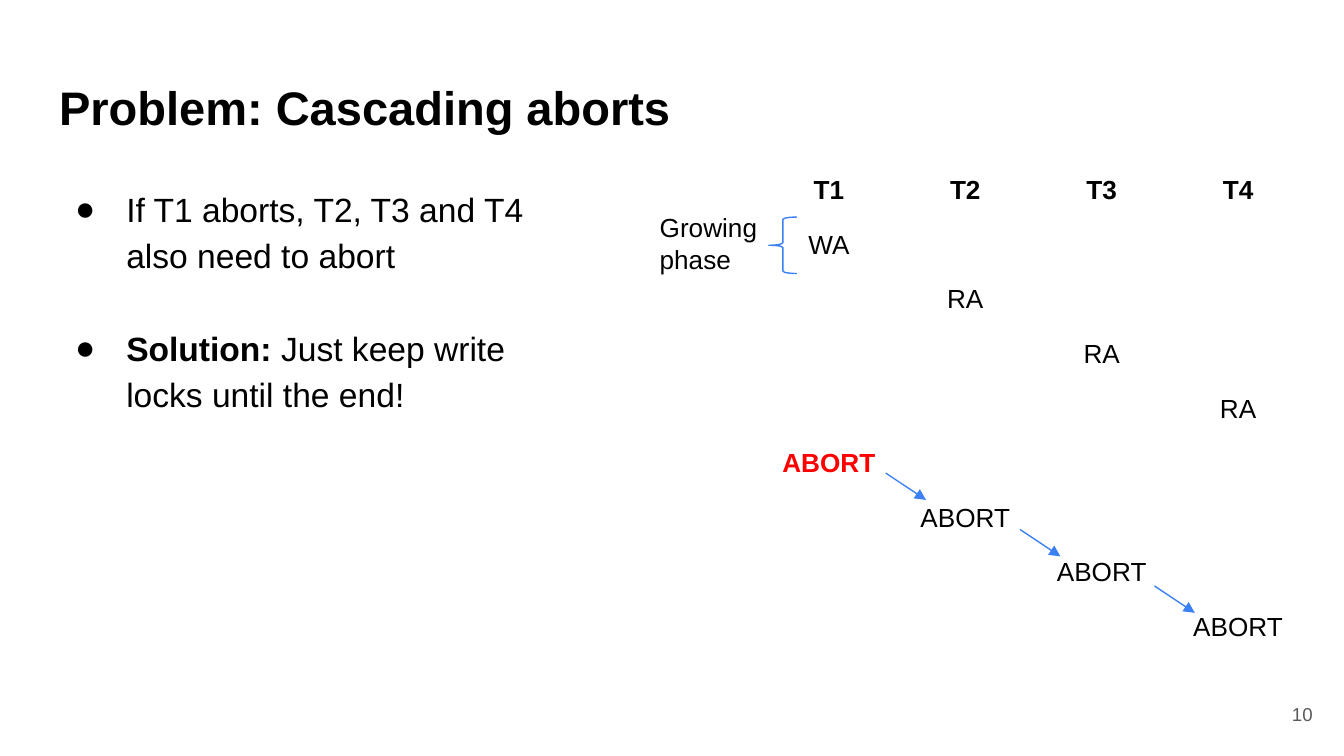
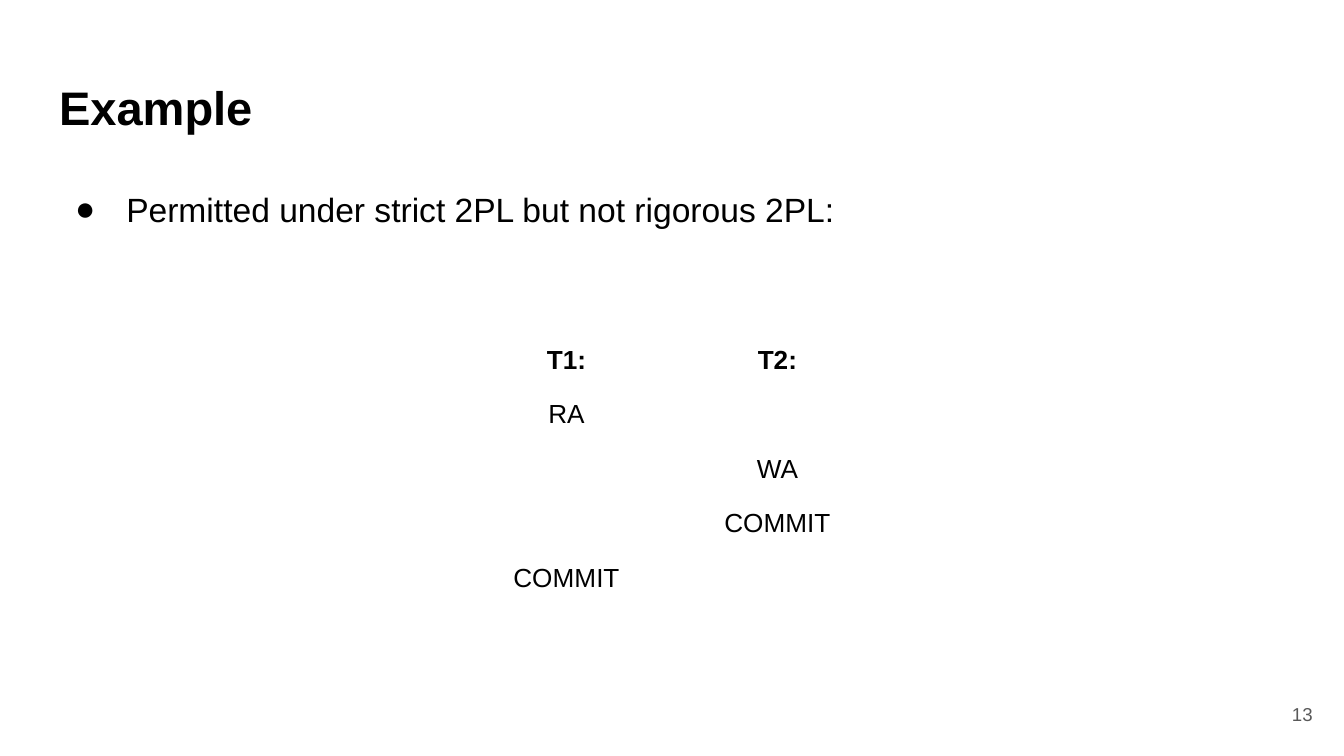
from dataclasses import dataclass

from pptx import Presentation
from pptx.dml.color import RGBColor
from pptx.enum.shapes import MSO_CONNECTOR, MSO_SHAPE
from pptx.enum.text import MSO_ANCHOR, PP_ALIGN
from pptx.oxml.ns import qn
from pptx.util import Inches, Pt
from lxml.etree import SubElement


@dataclass(frozen=True)
class Theme:
    font: str = "Arial"
    ink: str = "000000"
    muted: str = "595959"
    alert: str = "FF0000"
    accent: str = "3C81F3"
    paper: str = "FFFFFF"
    title_size: float = 25.2
    body_size: float = 18
    schedule_size: float = 14
    number_size: float = 10
    thin: float = 0.75
    rule: float = 1
    header_rule: float = 3


THEME = Theme()

# Grid: 100 columns across the slide, rows of the same length
COLUMNS = 100
LEFT = 3.41
FULL_WIDTH = 93.2
CONTENT_TOP = 12.6
CONTENT_HEIGHT = 37.4
SCHEDULE_ROW = 4.06


def write(paragraph, text, size=THEME.body_size, color=THEME.ink, bold=False, align=None):
    """Add one run of text to a paragraph."""
    run = paragraph.add_run()
    run.text = text
    run.font.name = THEME.font
    run.font.size = Pt(size)
    run.font.bold = bold
    run.font.color.rgb = RGBColor.from_string(color)
    if align is not None:
        paragraph.alignment = align


class Deck:
    def __init__(self, theme):
        self.theme = theme
        self.presentation = Presentation()
        # Widescreen, 16 to 9
        self.presentation.slide_width = Inches(10)
        self.presentation.slide_height = Inches(10 * 9 / 16)
        self.slide = None

    def grid(self, *lengths):
        unit = self.presentation.slide_width / COLUMNS
        return [round(length * unit) for length in lengths]

    def start_slide(self, title, number):
        """Begin a slide with the shared title and page number."""
        self.slide = self.presentation.slides.add_slide(self.presentation.slide_layouts[6])
        background = self.slide.background.fill
        background.solid()
        background.fore_color.rgb = RGBColor.from_string(self.theme.paper)
        heading = self.text_frame(LEFT, 4.87, FULL_WIDTH, 6.3)
        write(heading.paragraphs[0], title, size=self.theme.title_size, bold=True)
        footer = self.text_frame(92.65, 51, 6, 4.3)
        footer.vertical_anchor = MSO_ANCHOR.MIDDLE
        write(footer.paragraphs[0], str(number), size=self.theme.number_size,
              color=self.theme.muted, align=PP_ALIGN.RIGHT)

    def text_frame(self, left, top, width, height):
        frame = self.slide.shapes.add_textbox(*self.grid(left, top, width, height)).text_frame
        frame.word_wrap = True
        frame.margin_left, frame.margin_top, frame.margin_right, frame.margin_bottom = (
            self.grid(1, 1, 1, 1))
        return frame

    def bullets(self, points, width):
        """Bullet points, each a (bold lead, text) pair, one line apart."""
        frame = self.text_frame(LEFT, CONTENT_TOP, width, CONTENT_HEIGHT)
        for index, (lead, text) in enumerate(points):
            point = frame.add_paragraph() if index else frame.paragraphs[0]
            point.line_spacing = 1.15
            point.space_before = Pt(24.8 if index else 0)
            properties = point._p.get_or_add_pPr()
            properties.set("marL", str(Inches(0.5)))
            properties.set("indent", str(Inches(-0.38)))
            bullet_color = SubElement(properties, qn("a:buClr"))
            SubElement(bullet_color, qn("a:srgbClr"), val=self.theme.ink)
            SubElement(properties, qn("a:buFont"), typeface=self.theme.font)
            SubElement(properties, qn("a:buChar"), char="●")
            if lead:
                write(point, lead, bold=True)
            write(point, text)

    def label(self, text, left, top, width, height):
        frame = self.text_frame(left, top, width, height)
        frame.margin_top = frame.margin_bottom = self.grid(0.5)[0]
        write(frame.paragraphs[0], text, size=self.theme.schedule_size)

    def schedule(self, transactions, steps, left, top, column_width):
        """A header of transactions, then one action per row.

        Each step is (transaction index, action) plus optional text format.
        """
        count = len(transactions)
        height = SCHEDULE_ROW * (len(steps) + 1)
        table = self.slide.shapes.add_table(
            len(steps) + 1, count,
            *self.grid(left, top, column_width * count, height)).table
        table.first_row = table.horz_banding = False
        for row in range(len(steps) + 1):
            for column in range(count):
                self.cell_style(table.cell(row, column), is_header=row == 0)
        entries = [(0, column, name, {"bold": True})
                   for column, name in enumerate(transactions)]
        entries += [(row, column, action, style[0] if style else {})
                    for row, (column, action, *style) in enumerate(steps, 1)]
        for row, column, text, style in entries:
            write(table.cell(row, column).text_frame.paragraphs[0], text,
                  size=self.theme.schedule_size, align=PP_ALIGN.CENTER, **style)

    def cell_style(self, cell, is_header):
        properties = cell._tc.get_or_add_tcPr()
        for side in ("lnL", "lnR", "lnT", "lnB"):
            heavy = is_header and side == "lnB"
            width = self.theme.header_rule if heavy else self.theme.rule
            border = SubElement(properties, qn(f"a:{side}"), w=str(Pt(width)))
            fill = SubElement(border, qn("a:solidFill"))
            SubElement(fill, qn("a:srgbClr"), val=self.theme.paper)
        cell.fill.background()

    def stroke(self, line):
        line.color.rgb = RGBColor.from_string(self.theme.accent)
        line.width = Pt(self.theme.thin)

    def arrow(self, left, top, right, bottom):
        connector = self.slide.shapes.add_connector(
            MSO_CONNECTOR.STRAIGHT, *self.grid(left, top, right, bottom))
        self.stroke(connector.line)
        SubElement(connector.line._get_or_add_ln(), qn("a:tailEnd"), type="triangle")
        SubElement(connector._element.spPr, qn("a:effectLst"))

    def brace(self, left, top, width, height):
        brace = self.slide.shapes.add_shape(
            MSO_SHAPE.LEFT_BRACE, *self.grid(left, top, width, height))
        brace.shadow.inherit = False
        brace.fill.background()
        self.stroke(brace.line)


def cascading_aborts(deck):
    deck.start_slide("Problem: Cascading aborts", 10)
    deck.bullets([
        ("", "If T1 aborts, T2, T3 and T4 also need to abort"),
        ("Solution:", " Just keep write locks until the end!"),
    ], width=41.2)

    # Reads spread T1's write, then the aborts follow in the same order
    reads = [(reader, "RA") for reader in range(1, 4)]
    aborts = [(reader, "ABORT") for reader in range(1, 4)]
    first_abort = (0, "ABORT", {"bold": True, "color": THEME.alert})
    deck.schedule(["T1", "T2", "T3", "T4"],
                  [(0, "WA"), *reads, first_abort, *aborts],
                  left=56.6, top=CONTENT_TOP, column_width=10.15)
    for hop in range(3):
        left, top = 65.9 + 10 * hop, 35.2 + 4.2 * hop
        deck.arrow(left, top, left + 3, top + 2)

    # Growing phase of T1
    deck.brace(57.2, 16.15, 2.1, 4.2)
    deck.label("Growing phase", 48.1, 15.25, 12.5, 5.7)


def strict_example(deck):
    deck.start_slide("Example", 13)
    deck.bullets([("", "Permitted under strict 2PL but not rigorous 2PL:")],
                 width=FULL_WIDTH)
    deck.schedule(["T1:", "T2:"],
                  [(0, "RA"), (1, "WA"), (1, "COMMIT"), (0, "COMMIT")],
                  left=34.3, top=25.2, column_width=15.7)


def main():
    deck = Deck(THEME)
    cascading_aborts(deck)
    strict_example(deck)
    deck.presentation.save("out.pptx")


if __name__ == "__main__":
    main()
